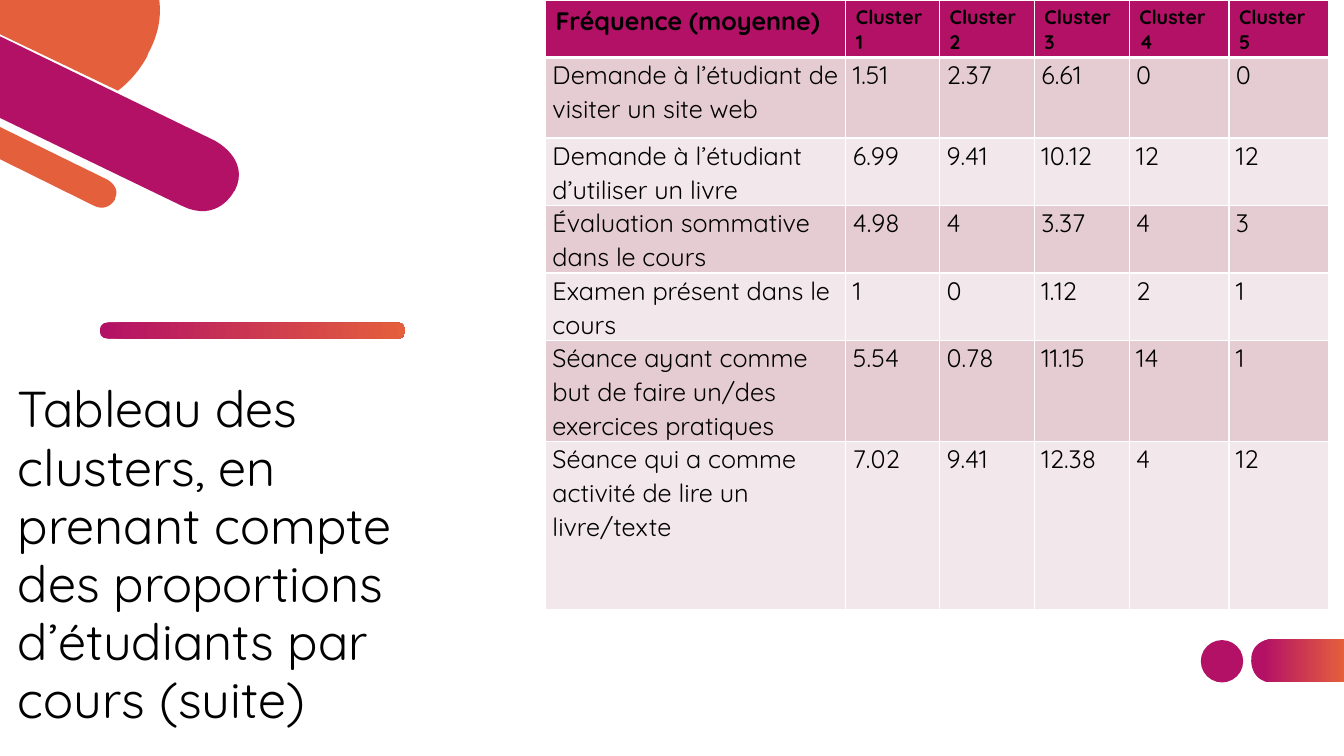
import lxml.etree
import pptx
import pptx.dml.color
import pptx.enum.shapes
import pptx.enum.text
import pptx.oxml.ns
import pptx.util

Inches = pptx.util.Inches
RGB = pptx.dml.color.RGBColor
MAGENTA = RGB(0xB3, 0x11, 0x66)
ORANGE = RGB(0xE4, 0x5F, 0x3C)
WHITE = RGB(0xFF, 0xFF, 0xFF)
BLACK = RGB(0, 0, 0)
DARK_ROW = RGB(0xE5, 0xCC, 0xD3)
LIGHT_ROW = RGB(0xF2, 0xE7, 0xEA)
FONT = "Quicksand"

TITLE = "Tableau des clusters, en prenant compte des proportions d’étudiants par cours (suite)"
HEADER = ["Fréquence (moyenne)"] + [f"Cluster {n}" for n in range(1, 6)]
ROWS = [
    ("Demande à l’étudiant de visiter un site web", "1.51", "2.37", "6.61", "0", "0"),
    ("Demande à l’étudiant d’utiliser un livre", "6.99", "9.41", "10.12", "12", "12"),
    ("Évaluation sommative dans le cours", "4.98", "4", "3.37", "4", "3"),
    ("Examen présent dans le cours", "1", "0", "1.12", "2", "1"),
    ("Séance ayant comme but de faire un/des exercices pratiques",
     "5.54", "0.78", "11.15", "14", "1"),
    ("Séance qui a comme activité de lire un livre/texte",
     "7.02", "9.41", "12.38", "4", "12"),
]
COL_WIDTHS = [2.98, 0.93, 0.94, 0.94, 0.99, 0.99]
ROW_HEIGHTS = [0.57, 0.8, 0.67, 0.67, 0.67, 1.0, 1.67]


def write(tf, text, size=18, bold=False, spacing=1.0):
    tf.word_wrap = True
    p = tf.paragraphs[0]
    p.line_spacing = spacing
    r = p.add_run()
    r.text = text
    r.font.name = FONT
    r.font.size = pptx.util.Pt(size)
    r.font.bold = bold
    r.font.color.rgb = BLACK


def paint(sp, color, end_color=None, start=0.0):
    """Fill with one colour, or with a left-to-right gradient to end_color."""
    sp.shadow.inherit = False
    sp.line.fill.background()
    if end_color is None:
        sp.fill.solid()
        sp.fill.fore_color.rgb = color
        return
    sp.fill.gradient()
    sp.fill.gradient_angle = 0
    stops = sp.fill.gradient_stops
    for stop, rgb, position in zip(stops, (color, end_color), (start, 1.0)):
        stop.color.rgb = rgb
        stop.position = position


def curve(p0, p1, p2, p3, steps=16):
    """Points along a cubic Bezier curve, without its first point."""
    points = []
    for i in range(1, steps + 1):
        t = i / steps
        weights = ((1 - t) ** 3, 3 * t * (1 - t) ** 2, 3 * t * t * (1 - t), t ** 3)
        points.append(tuple(sum(w * p[axis] for w, p in zip(weights, (p0, p1, p2, p3)))
                            for axis in (0, 1)))
    return points


def add_outline(s, left, top, steps):
    """Closed shape; a step is a point, or six numbers for a curve."""
    points = [steps[0]]
    for step in steps[1:]:
        if len(step) == 2:
            points.append(step)
        else:
            points += curve(points[-1], step[:2], step[2:4], step[4:])
    emu = [(Inches(left + x), Inches(top + y)) for x, y in points]
    builder = s.shapes.build_freeform(*emu[0])
    builder.add_line_segments(emu[1:], close=True)
    return builder.convert_to_shape()


def add_corner_bands(s, left, top):
    disc = [(0, 0), (1.58, 0), (1.6, 0.15, 1.58, 0.33, 1.47, 0.53), (1.46, 0.56),
            (1.46, 0.56, 1.36, 0.76, 1.17, 0.9), (0, 0.34)]
    wide_band = [(0, 0.36), (2.12, 1.39), (2.12, 1.39, 2.49, 1.57, 2.33, 1.89),
                 (2.32, 1.9), (2.32, 1.9, 2.16, 2.22, 1.8, 2.04), (0, 1.17)]
    thin_band = [(0, 1.26), (1.06, 1.78), (1.06, 1.78, 1.2, 1.85, 1.14, 1.97),
                 (1.14, 1.98), (1.14, 1.98, 1.07, 2.11, 0.93, 2.04), (0, 1.58)]
    for steps, color in ((disc, ORANGE), (wide_band, MAGENTA), (thin_band, ORANGE)):
        paint(add_outline(s, left, top, steps), color)


def add_title(s, left, top, width, height):
    bar = s.shapes.add_shape(pptx.enum.shapes.MSO_SHAPE.ROUNDED_RECTANGLE,
                             Inches(left + 0.91), Inches(top + 0.7),
                             Inches(3.03), Inches(0.16))
    bar.adjustments[0] = 0.45
    paint(bar, MAGENTA, ORANGE)
    tf = s.shapes.add_textbox(Inches(left), Inches(top),
                              Inches(width), Inches(height)).text_frame
    tf.vertical_anchor = pptx.enum.text.MSO_ANCHOR.BOTTOM
    write(tf, TITLE, size=36, spacing=0.96)


def add_borders(cell, bottom):
    tc_pr = cell._tc.get_or_add_tcPr()
    qn = pptx.oxml.ns.qn
    for i, (tag, points) in enumerate((("a:lnL", 1), ("a:lnR", 1),
                                       ("a:lnT", 1), ("a:lnB", bottom))):
        ln = lxml.etree.Element(qn(tag), w=str(pptx.util.Pt(points)))
        fill = lxml.etree.SubElement(ln, qn("a:solidFill"))
        lxml.etree.SubElement(fill, qn("a:srgbClr"), val=str(WHITE))
        tc_pr.insert(i, ln)


def format_cell(cell, text, row, col):
    cell.fill.solid()
    if row == 0:
        cell.fill.fore_color.rgb = MAGENTA
        if col:
            cell.vertical_anchor = pptx.enum.text.MSO_ANCHOR.MIDDLE
        write(cell.text_frame, text, size=14 if col else 18, bold=True)
    else:
        cell.fill.fore_color.rgb = DARK_ROW if row % 2 else LIGHT_ROW
        cell.margin_left = cell.margin_right = Inches(0.07)
        cell.margin_top = cell.margin_bottom = 0
        write(cell.text_frame, text, spacing=1.07)
    add_borders(cell, bottom=1 if row else 3)


def add_cluster_table(s, left, top):
    table = s.shapes.add_table(len(ROW_HEIGHTS), len(COL_WIDTHS), Inches(left), Inches(top),
                               Inches(sum(COL_WIDTHS)), Inches(sum(ROW_HEIGHTS))).table
    for column, width in zip(table.columns, COL_WIDTHS):
        column.width = Inches(width)
    for row, height in zip(table.rows, ROW_HEIGHTS):
        row.height = Inches(height)
    for row, texts in enumerate([HEADER, *ROWS]):
        for col, text in enumerate(texts):
            format_cell(table.cell(row, col), text, row, col)


def add_footer_mark(s, left, top):
    dot = s.shapes.add_shape(pptx.enum.shapes.MSO_SHAPE.OVAL, Inches(left),
                             Inches(top + 0.01), Inches(0.42), Inches(0.42))
    paint(dot, MAGENTA)
    tab = add_outline(s, left + 0.5, top, [
        (0.21, 0.43), (0.92, 0.43), (0.92, 0), (0.21, 0),
        (0.21, 0, 0, 0, 0, 0.21), (0, 0.22), (0, 0.22, 0, 0.43, 0.21, 0.43)])
    paint(tab, MAGENTA, ORANGE, start=0.12)


def main():
    prs = pptx.Presentation()
    prs.slide_width, prs.slide_height = Inches(13.33), Inches(7.5)
    s = prs.slides.add_slide(prs.slide_layouts[6])
    s.background.fill.solid()
    s.background.fill.fore_color.rgb = WHITE
    add_corner_bands(s, 0, 0)
    add_title(s, 0.08, 2.5, 4.68, 4.79)
    add_cluster_table(s, 5.41, 0)
    add_footer_mark(s, 11.91, 6.34)
    prs.save("out.pptx")


if __name__ == "__main__":
    main()
